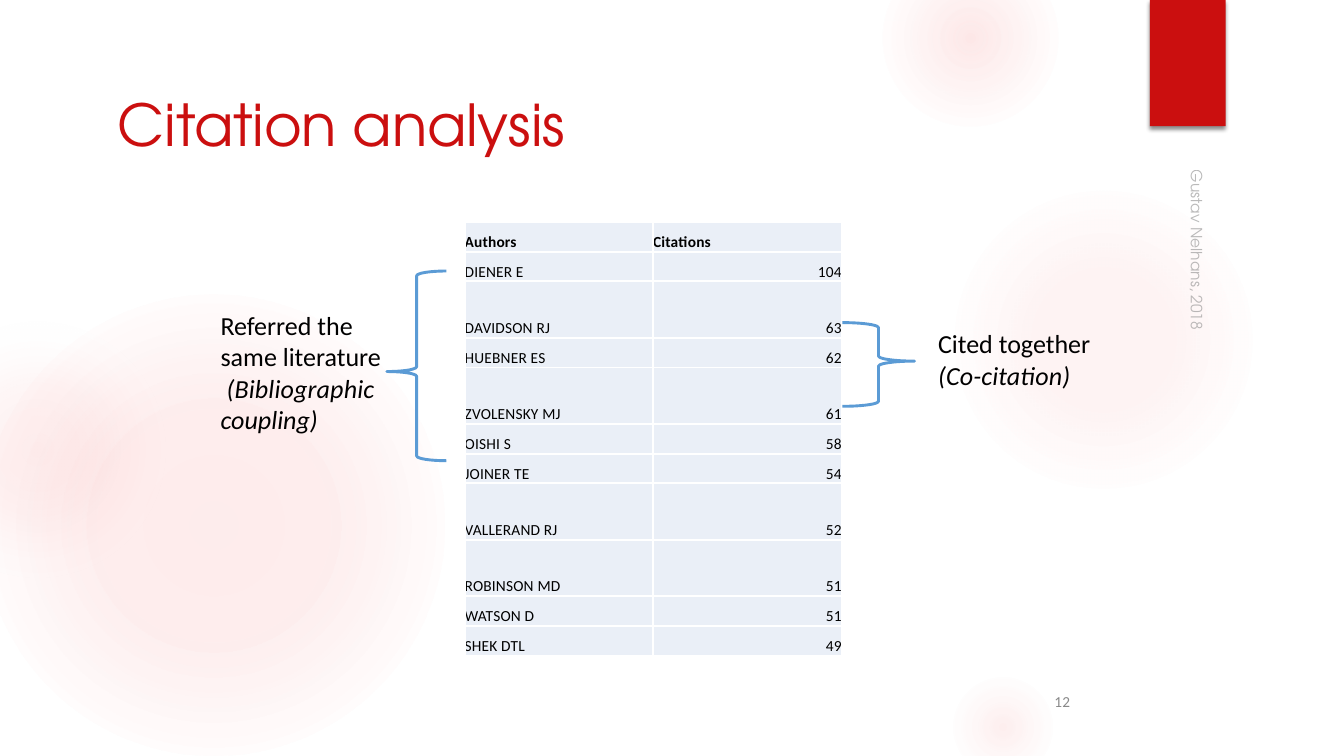
from dataclasses import dataclass

from lxml.etree import SubElement
from pptx import Presentation
from pptx.dml.color import RGBColor
from pptx.enum.shapes import MSO_SHAPE
from pptx.enum.text import MSO_ANCHOR, PP_ALIGN
from pptx.oxml import parse_xml
from pptx.oxml.ns import nsdecls, qn
from pptx.util import Cm, Pt

RED = "CB0F0F"
GLOW = "F35C5C"
BLACK = "000000"
BRACE_BLUE = "5B9BD5"
CELL_BLUE = "EAEFF7"
WHITE = "FFFFFF"
BODY_FONT = "Calibri"
DISPLAY_FONT = "TeX Gyre Adventor"


@dataclass(frozen=True)
class Box:
    left: float
    top: float
    width: float
    height: float

    def lengths(self) -> tuple:
        return Cm(self.left), Cm(self.top), Cm(self.width), Cm(self.height)


@dataclass(frozen=True)
class Halo:
    left: float
    top: float
    diameter: float
    stops: tuple


@dataclass(frozen=True)
class Brace:
    preset: MSO_SHAPE
    box: Box
    curve: float
    tip: float


@dataclass(frozen=True)
class Author:
    name: str
    citations: int
    tall: bool = False


HALOS = (
    Halo(-0.43, 7.42, 11.63, ((0, GLOW, 11), (36, GLOW, 10), (75, GLOW, 0))),
    Halo(-2.34, 8.05, 6.55, ((0, GLOW, 8), (36, GLOW, 5), (71, "F3F3F3", 0))),
    Halo(23.9, 4.65, 7.82, ((0, GLOW, 7), (36, GLOW, 6), (69, GLOW, 0))),
    Halo(22.23, -1.27, 4.45, ((0, GLOW, 14), (36, GLOW, 7), (73, GLOW, 0))),
    Halo(23.9, 16.94, 2.74, ((0, GLOW, 10), (31, GLOW, 5), (66, GLOW, 0))),
)
BRACES = (
    Brace(MSO_SHAPE.LEFT_BRACE, Box(9.75, 6.83, 1.5, 4.78), 0.08, 0.53),
    Brace(MSO_SHAPE.RIGHT_BRACE, Box(21.23, 8.13, 1.82, 2.11), 0.07, 0.46),
)
AUTHORS = (
    Author("DIENER E", 104),
    Author("DAVIDSON RJ", 63, tall=True),
    Author("HUEBNER ES", 62),
    Author("ZVOLENSKY MJ", 61, tall=True),
    Author("OISHI S", 58),
    Author("JOINER TE", 54),
    Author("VALLERAND RJ", 52, tall=True),
    Author("ROBINSON MD", 51, tall=True),
    Author("WATSON D", 51),
    Author("SHEK DTL", 49),
)


def rgb(value: str) -> RGBColor:
    return RGBColor.from_string(value)


def write(frame, text: str, *, size: float, color: str = BLACK, font: str = BODY_FONT,
          bold: bool = False, italic: bool = False, align=PP_ALIGN.LEFT, spacing=None,
          before: float = 0, indent: float = 0, tracking: float = 0, opacity: int = 100) -> None:
    first = frame.paragraphs[0]
    paragraph = frame.add_paragraph() if first.runs else first
    paragraph.alignment = align
    if spacing:
        paragraph.line_spacing = spacing
    if before:
        paragraph.space_before = Pt(before)
    if indent:
        paragraph._p.get_or_add_pPr().set("indent", str(Cm(indent)))
    run = paragraph.add_run()
    run.text = text
    run.font.name = font
    run.font.size = Pt(size)
    run.font.bold = bold
    run.font.italic = italic
    run.font.color.rgb = rgb(color)
    properties = run._r.get_or_add_rPr()
    if tracking:
        properties.set("spc", str(round(tracking * 100)))
    if opacity < 100:
        tint = properties.find(".//" + qn("a:srgbClr"))
        SubElement(tint, qn("a:alpha"), val=str(opacity * 1000))


def add_text_frame(slide, box: Box):
    frame = slide.shapes.add_textbox(*box.lengths()).text_frame
    frame.word_wrap = True
    frame.margin_left = frame.margin_right = frame.margin_top = frame.margin_bottom = 0
    return frame


def draw_halo(slide, halo: Halo) -> None:
    box = Box(halo.left, halo.top, halo.diameter, halo.diameter)
    circle = slide.shapes.add_shape(MSO_SHAPE.OVAL, *box.lengths())
    circle.shadow.inherit = False
    circle.line.fill.background()
    circle.fill.background()
    stops = "".join(
        f'<a:gs pos="{position * 1000}"><a:srgbClr val="{color}">'
        f'<a:alpha val="{opacity * 1000}"/></a:srgbClr></a:gs>'
        for position, color, opacity in halo.stops
    )
    gradient = parse_xml(
        f'<a:gradFill {nsdecls("a")} rotWithShape="1"><a:gsLst>{stops}</a:gsLst>'
        '<a:path path="circle"><a:fillToRect l="50000" t="50000" r="50000" b="50000"/>'
        '</a:path></a:gradFill>'
    )
    properties = circle._element.spPr
    properties.replace(properties.find(qn("a:noFill")), gradient)


def draw_ribbon(slide) -> None:
    ribbon = slide.shapes.add_shape(MSO_SHAPE.RECTANGLE, *Box(28.98, 0, 1.91, 3.18).lengths())
    ribbon.shadow.inherit = False
    ribbon.fill.solid()
    ribbon.fill.fore_color.rgb = rgb(RED)
    ribbon.line.fill.background()
    effects = ribbon._element.spPr.find(qn("a:effectLst"))
    shadow = SubElement(effects, qn("a:outerShdw"), blurRad=str(Pt(3)), dist=str(Pt(2)),
                        dir="5400000", rotWithShape="0")
    tint = SubElement(shadow, qn("a:srgbClr"), val=BLACK)
    SubElement(tint, qn("a:alpha"), val="45000")


def draw_brace(slide, brace: Brace) -> None:
    outline = slide.shapes.add_shape(brace.preset, *brace.box.lengths())
    outline.shadow.inherit = False
    outline.fill.background()
    outline.line.color.rgb = rgb(BRACE_BLUE)
    outline.line.width = Pt(2.07)
    outline.adjustments[0] = brace.curve
    outline.adjustments[1] = brace.tip


def fill_cell(cell, text: str, bold: bool, align) -> None:
    cell.margin_left = cell.margin_right = cell.margin_top = cell.margin_bottom = 0
    cell.vertical_anchor = MSO_ANCHOR.BOTTOM
    properties = cell._tc.get_or_add_tcPr()
    for side in ("lnL", "lnR", "lnT", "lnB"):
        border = SubElement(properties, qn(f"a:{side}"), w=str(Pt(1.5)))
        SubElement(SubElement(border, qn("a:solidFill")), qn("a:srgbClr"), val=WHITE)
    cell.fill.solid()
    cell.fill.fore_color.rgb = rgb(CELL_BLUE)
    write(cell.text_frame, text, size=11, bold=bold, align=align, spacing=Pt(14.1), tracking=0.1)


def draw_citation_table(slide) -> None:
    heights = [0.75] + [1.42 if author.tall else 0.75 for author in AUTHORS]
    box = Box(11.71, 5.59, 9.5, sum(heights))
    citations = slide.shapes.add_table(len(heights), 2, *box.lengths()).table
    citations.first_row = citations.horz_banding = False
    for column in citations.columns:
        column.width = Cm(4.75)
    for row, height in zip(citations.rows, heights):
        row.height = Cm(height)
    for column, heading in enumerate(("Authors", "Citations")):
        fill_cell(citations.cell(0, column), heading, True, PP_ALIGN.LEFT)
    for row, author in enumerate(AUTHORS, start=1):
        fill_cell(citations.cell(row, 0), author.name, False, PP_ALIGN.LEFT)
        fill_cell(citations.cell(row, 1), str(author.citations), False, PP_ALIGN.RIGHT)


def draw_labels(slide) -> None:
    coupling = add_text_frame(slide, Box(5.56, 7.8, 4.3, 3.25))
    write(coupling, "Referred the", size=18.6)
    write(coupling, "same literature", size=18.6)
    write(coupling, "(Bibliographic", size=18.6, italic=True, indent=0.15, tracking=0.1)
    write(coupling, "coupling)", size=18.6, italic=True)
    cocitation = add_text_frame(slide, Box(23.64, 8.26, 4.1, 1.63))
    write(cocitation, "Cited together", size=18.6)
    write(cocitation, "(Co-citation)", size=18.6, italic=True, before=0.4, tracking=0.1)
    credit = slide.shapes.add_textbox(*Box(24.87, 8.97, 10.72, 0.84).lengths())
    credit.rotation = 90
    credit.text_frame.word_wrap = True
    credit.text_frame.vertical_anchor = MSO_ANCHOR.BOTTOM
    write(credit.text_frame, "Gustav Nelhans, 2018", size=11, color="8C8C8C",
          font=DISPLAY_FONT, opacity=60)


def main() -> None:
    deck = Presentation()
    deck.slide_width, deck.slide_height = Cm(33.87), Cm(19.05)
    slide = deck.slides.add_slide(deck.slide_layouts[6])
    for halo in HALOS:
        draw_halo(slide, halo)
    draw_ribbon(slide)
    write(add_text_frame(slide, Box(2.97, 2.24, 13.39, 1.8)), "Citation analysis",
          size=41.3, color=RED, font=DISPLAY_FONT, tracking=-0.1)
    draw_citation_table(slide)
    write(add_text_frame(slide, Box(26.57, 17.44, 0.6, 0.51)), "12",
          size=10.9, color="898989", tracking=0.2)
    for brace in BRACES:
        draw_brace(slide, brace)
    draw_labels(slide)
    deck.save("out.pptx")


if __name__ == "__main__":
    main()
